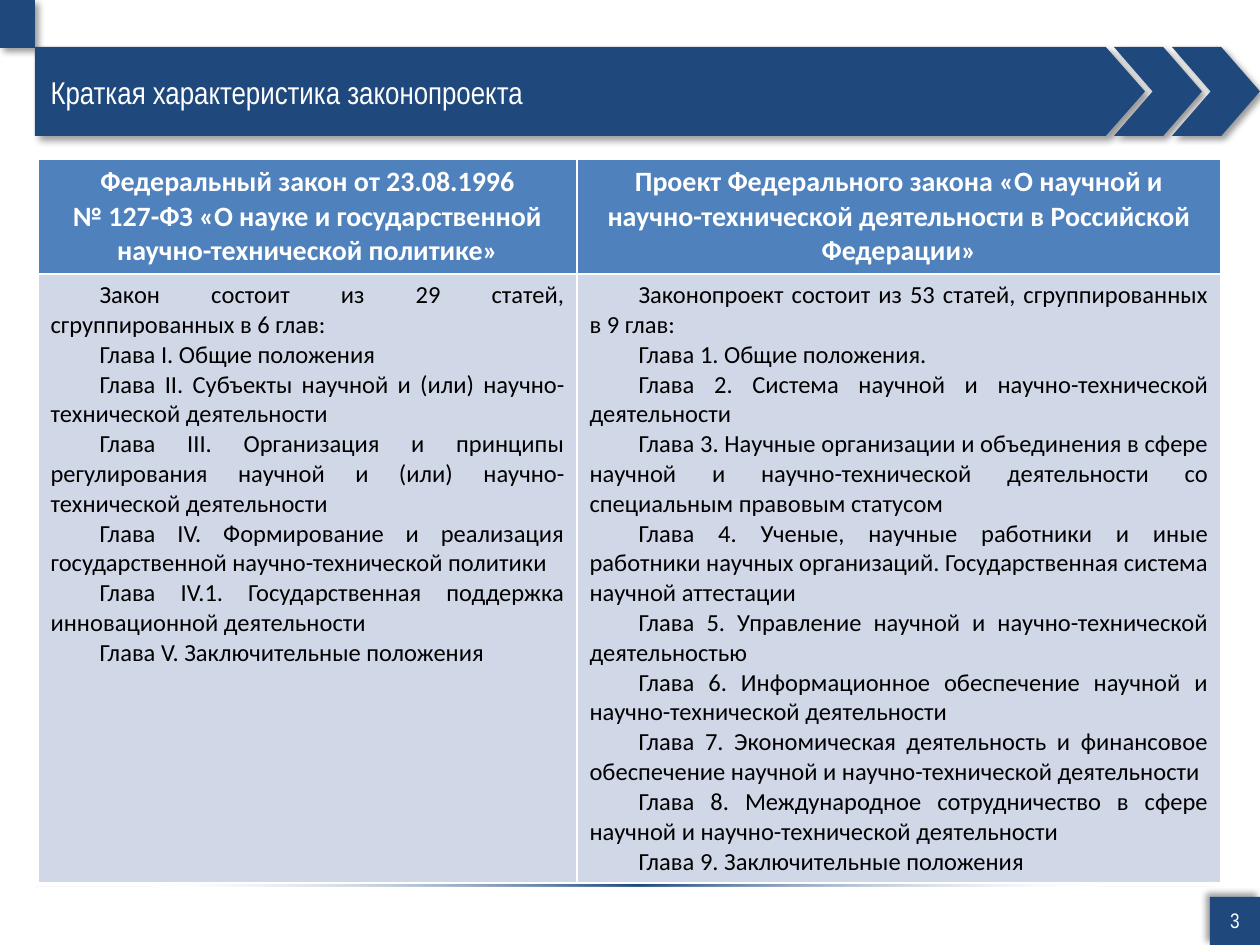
from lxml import etree
from pptx import Presentation
from pptx import util as u
from pptx.dml.color import RGBColor
from pptx.enum import shapes, text
from pptx.oxml import parse_xml
from pptx.oxml.ns import nsdecls, qn

NAVY = RGBColor(0x1F, 0x49, 0x7D)
PALE = RGBColor(0xDC, 0xE6, 0xF2)
BLUE = RGBColor(0x4F, 0x81, 0xBD)
CELL = RGBColor(0xD0, 0xD8, 0xE8)
WHITE = RGBColor(0xFF, 0xFF, 0xFF)
BLACK = RGBColor(0, 0, 0)

HEADERS = [
    "Федеральный закон от 23.08.1996\v"
    "№ 127-ФЗ «О науке и государственной научно-технической политике»",
    "Проект Федерального закона «О научной и научно-технической "
    "деятельности в Российской Федерации»",
]
CHAPTERS = [
    [
        "Закон состоит из 29 статей, сгруппированных в 6 глав:",
        "Глава I. Общие положения",
        "Глава II. Субъекты научной и (или) научно-технической деятельности",
        "Глава III. Организация и принципы регулирования научной и (или) "
        "научно-технической деятельности",
        "Глава IV. Формирование и реализация государственной "
        "научно-технической политики",
        "Глава IV.1. Государственная поддержка инновационной деятельности",
        "Глава V. Заключительные положения",
    ],
    [
        "Законопроект состоит из 53 статей, сгруппированных в 9 глав:",
        "Глава 1. Общие положения.",
        "Глава 2. Система научной и научно-технической деятельности",
        "Глава 3. Научные организации и объединения в сфере научной и "
        "научно-технической деятельности со специальным правовым статусом",
        "Глава 4. Ученые, научные работники и иные работники научных "
        "организаций. Государственная система научной аттестации",
        "Глава 5. Управление научной и научно-технической деятельностью",
        "Глава 6. Информационное обеспечение научной и научно-технической "
        "деятельности",
        "Глава 7. Экономическая деятельность и финансовое обеспечение научной "
        "и научно-технической деятельности",
        "Глава 8. Международное сотрудничество в сфере научной и "
        "научно-технической деятельности",
        "Глава 9. Заключительные положения",
    ],
]


def px(value):
    return u.Emu(round(value * 914400 / 126))


class Deck:
    narrow = "Arial Narrow"
    body = "Calibri"

    def __init__(self, width, height):
        self.presentation = Presentation()
        self.presentation.slide_width = px(width)
        self.presentation.slide_height = px(height)
        self.slide = None

    def add_slide(self):
        layout = self.presentation.slide_layouts.get_by_name("Title Only")
        self.slide = self.presentation.slides.add_slide(layout)

    def set_text(self, frame, lines, size, color, align, font, bold=False, indent=0):
        frame.word_wrap = True
        for number, line in enumerate(lines):
            paragraph = frame.paragraphs[0] if number == 0 else frame.add_paragraph()
            paragraph.text = line
            paragraph.alignment = align
            paragraph.font.name = font
            paragraph.font.size = u.Pt(size)
            paragraph.font.bold = bold
            paragraph.font.color.rgb = color
            if indent:
                properties = paragraph._p.get_or_add_pPr()
                properties.set("marL", "0")
                properties.set("indent", str(px(indent)))

    def shape(self, kind, box, point=0, shadow_angle=None):
        shape = self.slide.shapes.add_shape(kind, *map(px, box))
        shape.adjustments[0] = point
        shape.fill.solid()
        shape.fill.fore_color.rgb = NAVY
        shape.line.fill.background()
        shape.shadow.inherit = False
        if shadow_angle is not None:
            effects = shape.element.spPr.find(qn("a:effectLst"))
            shadow = etree.SubElement(
                effects, qn("a:outerShdw"), blurRad=str(u.Pt(4)),
                dist=str(u.Pt(3)), dir=str(shadow_angle * 60000), rotWithShape="0")
            color = etree.SubElement(shadow, qn("a:srgbClr"), val=str(BLACK))
            etree.SubElement(color, qn("a:alpha"), val="40000")
        return shape

    def fading_rule(self, box):
        rule = self.shape(shapes.MSO_SHAPE.PENTAGON, box)
        stops = "".join(
            f'<a:gs pos="{position}000"><a:srgbClr val="{color}">'
            f'<a:alpha val="{alpha}000"/></a:srgbClr></a:gs>'
            for position, color, alpha in ((10, PALE, 0), (51, NAVY, 100), (90, PALE, 0)))
        gradient = parse_xml(
            f'<a:gradFill {nsdecls("a")}><a:gsLst>{stops}</a:gsLst>'
            '<a:lin ang="0" scaled="0"/></a:gradFill>')
        properties = rule.element.spPr
        properties.replace(properties.find(qn("a:solidFill")), gradient)

    def title(self, box, words):
        title = self.slide.shapes.title
        title.left, title.top, title.width, title.height = map(px, box)
        title.text_frame.vertical_anchor = text.MSO_ANCHOR.MIDDLE
        self.set_text(title.text_frame, [words], 18, WHITE, text.PP_ALIGN.LEFT, self.narrow)
        # Bring the title in front of the banner
        title.element.getparent().append(title.element)

    def label(self, box, words):
        label = self.slide.shapes.add_textbox(*map(px, box))
        label.text_frame.vertical_anchor = text.MSO_ANCHOR.MIDDLE
        self.set_text(label.text_frame, [words], 12, WHITE, text.PP_ALIGN.CENTER, self.narrow)

    def table(self, left, top, widths, heights, headers, columns):
        table = self.slide.shapes.add_table(
            2, len(widths), px(left), px(top), px(sum(widths)), px(sum(heights))).table
        for row, height in zip(table.rows, heights):
            row.height = px(height)
        for index, width in enumerate(widths):
            table.columns[index].width = px(width)
            head, cell = table.cell(0, index), table.cell(1, index)
            for part, color in ((head, BLUE), (cell, CELL)):
                part.fill.solid()
                part.fill.fore_color.rgb = color
            self.set_text(head.text_frame, [headers[index]], 16, WHITE,
                          text.PP_ALIGN.CENTER, self.body, bold=True)
            self.set_text(cell.text_frame, columns[index], 14, BLACK,
                          text.PP_ALIGN.JUSTIFY, self.body, indent=49)


def main():
    deck = Deck(1260, 945)
    deck.add_slide()
    plate, chevron = shapes.MSO_SHAPE.PENTAGON, shapes.MSO_SHAPE.CHEVRON

    # Corner blocks
    deck.shape(plate, (1210, 897, 50, 48), shadow_angle=225)
    deck.shape(plate, (0, 0, 35, 48), shadow_angle=45)

    # Banner, footer rule and chevrons
    deck.shape(plate, (35, 47, 1110, 89), 0.44, 45)
    deck.fading_rule((35, 883, 1181, 3))
    for left in (1114, 1172):
        deck.shape(chevron, (left, 47, 88, 89), 0.44, 45)

    # Title and page number
    deck.title((38, 48, 1129, 88), "Краткая характеристика законопроекта")
    deck.label((1210, 895, 50, 50), "3")

    # Comparison of the law and the bill
    deck.table(38, 159, (539, 644), (115, 609), HEADERS, CHAPTERS)

    deck.presentation.save("out.pptx")


if __name__ == "__main__":
    main()
